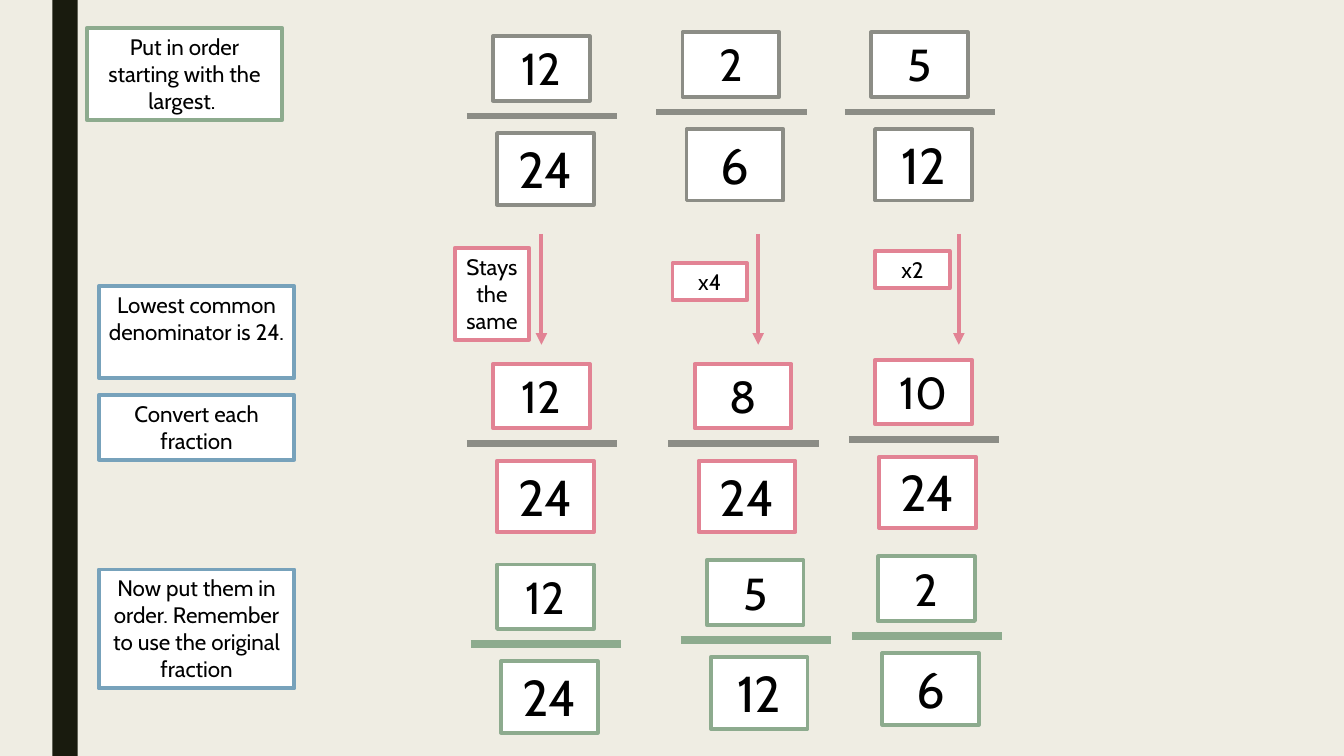
from dataclasses import dataclass

from lxml.etree import SubElement
from pptx import Presentation
from pptx.dml.color import RGBColor
from pptx.enum.shapes import MSO_CONNECTOR, MSO_SHAPE
from pptx.enum.text import MSO_ANCHOR, PP_ALIGN
from pptx.oxml.ns import qn
from pptx.shapes.connector import Connector
from pptx.util import Inches, Pt

GREY, GREEN, BLUE, PINK = "8C8D86", "8DAB8E", "77A2BB", "E28394"
WHITE, BLACK, DARK, CREAM = "FFFFFF", "000000", "191B0E", "EFEDE3"


@dataclass
class Label:
    text: str
    left: float
    top: float
    width: float
    height: float
    color: str
    size: int = 16


@dataclass
class Fraction:
    top: str
    bottom: str
    x: float
    y: float


@dataclass
class Row:
    box: str
    bar: str
    weight: float
    items: list[Fraction]


LABELS = [
    Label("Put in order starting with the largest. ", 0.86, 0.28, 1.94, 0.91, GREEN),
    Label("Lowest common denominator is 24.", 0.98, 2.84, 1.94, 0.91, BLUE),
    Label("Convert each fraction", 0.98, 3.92, 1.94, 0.64, BLUE),
    Label("Now put them in order. Remember to use the original fraction",
          0.98, 5.65, 1.94, 1.18, BLUE),
    Label("Stays the same", 4.51, 2.46, 0.74, 0.91, PINK),
    Label("x4", 6.67, 2.61, 0.74, 0.37, PINK),
    Label("x2", 8.68, 2.49, 0.74, 0.37, PINK),
]
ROWS = [
    Row(GREY, GREY, 4.5, [Fraction("12", "24", 4.89, 0.36),
                          Fraction("2", "6", 6.77, 0.32),
                          Fraction("5", "12", 8.64, 0.32)]),
    Row(PINK, GREY, 4.5, [Fraction("12", "24", 4.89, 3.61),
                          Fraction("8", "24", 6.89, 3.61),
                          Fraction("10", "24", 8.68, 3.57)]),
    Row(GREEN, GREEN, 6, [Fraction("12", "24", 4.93, 5.6),
                          Fraction("5", "12", 7.01, 5.56),
                          Fraction("2", "6", 8.71, 5.52)]),
]
ARROWS = [5.37, 7.52, 9.51]


def rgb(color: str) -> RGBColor:
    return RGBColor.from_string(color)


def add_label(shapes, label: Label) -> None:
    box = shapes.add_textbox(Inches(label.left), Inches(label.top),
                             Inches(label.width), Inches(label.height))
    box.fill.solid()
    box.fill.fore_color.rgb = rgb(WHITE)
    box.line.color.rgb = rgb(label.color)
    box.line.width = Pt(2.75)
    frame = box.text_frame
    frame.word_wrap = True
    frame.vertical_anchor = MSO_ANCHOR.TOP
    para = frame.paragraphs[0]
    para.text = label.text
    para.alignment = PP_ALIGN.CENTER
    para.font.name = "Cabin"
    para.font.size = Pt(label.size)
    para.font.color.rgb = rgb(BLACK)


def add_line(shapes, x: float, y: float, width: float, height: float,
             color: str, weight: float) -> Connector:
    line = shapes.add_connector(MSO_CONNECTOR.STRAIGHT, Inches(x), Inches(y),
                                Inches(x + width), Inches(y + height))
    line.line.color.rgb = rgb(color)
    line.line.width = Pt(weight)
    SubElement(line._element.spPr, qn("a:effectLst"))
    return line


def add_arrow(shapes, x: float) -> None:
    arrow = add_line(shapes, x, 2.32, 0, 1.1, PINK, 2.75)
    SubElement(arrow.line._get_or_add_ln(), qn("a:tailEnd"), type="triangle")


def add_fraction(shapes, item: Fraction, row: Row) -> None:
    group = shapes.add_group_shape().shapes
    x, y = item.x, item.y
    add_label(group, Label(item.top, x, y, 0.96, 0.64, row.box, 32))
    add_label(group, Label(item.bottom, x + 0.04, y + 0.96, 0.96, 0.71, row.box, 36))
    add_line(group, x - 0.26, y + 0.79, 1.49, 0, row.bar, row.weight)


def main() -> None:
    deck = Presentation()
    deck.slide_width, deck.slide_height = Inches(13.33), Inches(7.5)
    slide = deck.slides.add_slide(deck.slide_layouts[6])
    shapes = slide.shapes

    # Background and side band
    slide.background.fill.solid()
    slide.background.fill.fore_color.rgb = rgb(CREAM)
    band = shapes.add_shape(MSO_SHAPE.RECTANGLE, Inches(0.52), 0,
                            Inches(0.25), Inches(7.5))
    band.shadow.inherit = False
    band.fill.solid()
    band.fill.fore_color.rgb = rgb(DARK)
    band.line.fill.background()

    # Instructions and multipliers
    for label in LABELS:
        add_label(shapes, label)

    # Arrows from given to converted fractions
    for x in ARROWS:
        add_arrow(shapes, x)

    # Given, converted and ordered fractions
    for row in ROWS:
        for item in row.items:
            add_fraction(shapes, item, row)

    deck.save("out.pptx")


if __name__ == "__main__":
    main()
